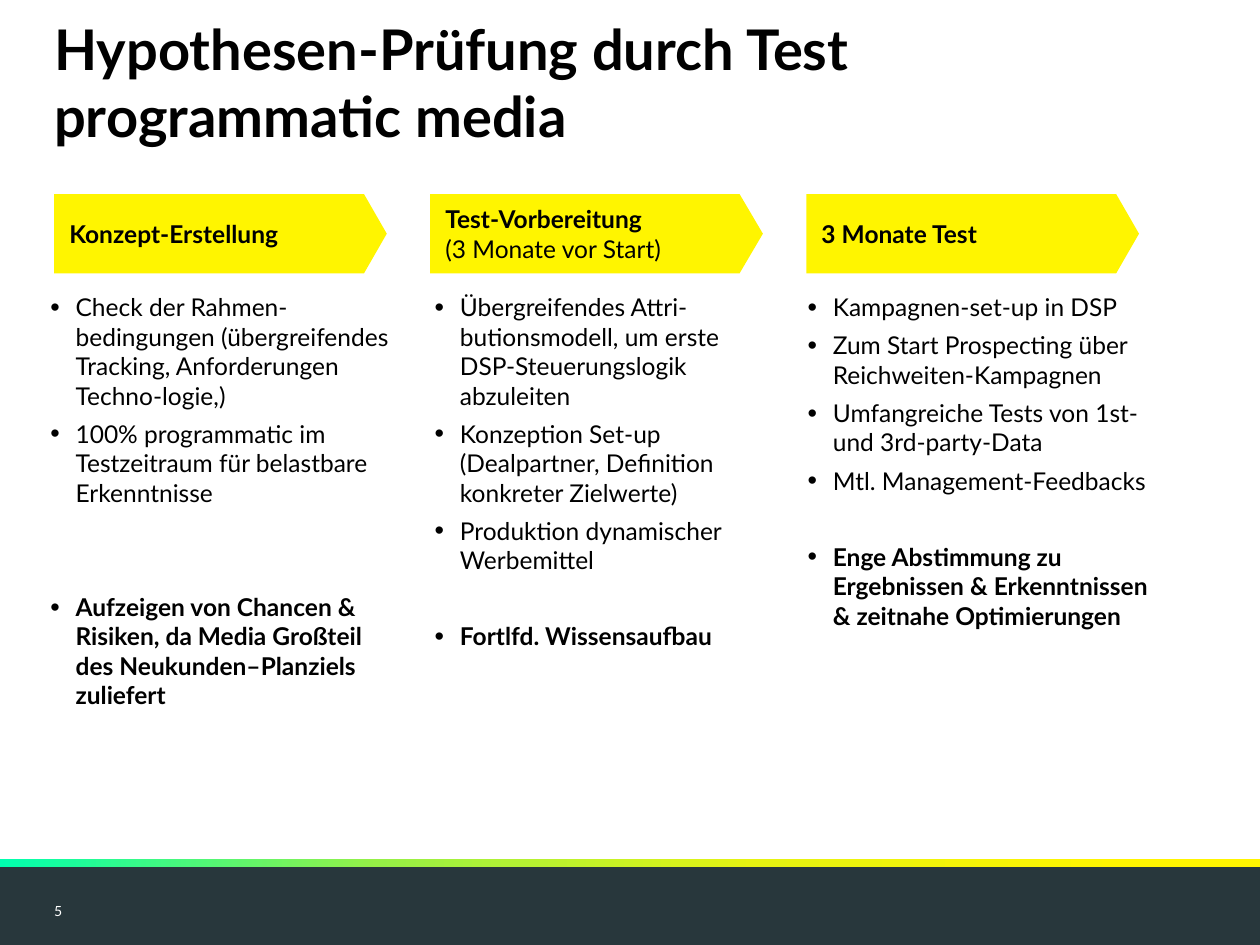
from copy import deepcopy
from dataclasses import dataclass

from lxml import etree
from pptx import Presentation
from pptx.dml.color import RGBColor
from pptx.enum.shapes import MSO_SHAPE
from pptx.enum.text import MSO_ANCHOR, MSO_AUTO_SIZE, PP_ALIGN
from pptx.oxml.ns import qn
from pptx.util import Inches, Pt

RECT, ARROW = MSO_SHAPE.RECTANGLE, MSO_SHAPE.PENTAGON
TOP, MID, LOW = MSO_ANCHOR.TOP, MSO_ANCHOR.MIDDLE, MSO_ANCHOR.BOTTOM
LEFT = PP_ALIGN.LEFT
FIXED = MSO_AUTO_SIZE.NONE

WIDE, HIGH = 10, 7.5
EDGE, STEP = 0.43, 2.985
HEAD_TOP, LIST_TOP = 1.54, 2.32
GAP, LINE = 5, 16.8
COLORS = {"ink": "000000", "paper": "FFFFFF", "sun": "FFF500", "slate": "28373C"}
FADE = [(0, "00FFAF"), (0.3, "96F046"), (0.6, "E6F311"), (0.9, "FFF500")]


@dataclass
class Phase:
    head: str
    note: str
    tip: float
    left: float
    width: float
    items: list[str]
    goal: str
    skip: int
    slot: int


PHASES = [
    Phase("Konzept-Erstellung", "", 0.287, 0.4, 2.8, [
        "Check der Rahmen-bedingungen (übergreifendes Tracking, Anforderungen Techno-logie,)",
        "100% programmatic im Testzeitraum für belastbare Erkenntnisse",
    ], "Aufzeigen von Chancen & Risiken, da Media Großteil des Neukunden–Planziels zuliefert", 2, 1),
    Phase("Test-Vorbereitung", "(3 Monate vor Start)", 0.294, 3.45, 2.74, [
        "Übergreifendes Attri-butionsmodell, um erste DSP-Steuerungslogik abzuleiten",
        "Konzeption Set-up (Dealpartner, Definition konkreter Zielwerte)",
        "Produktion dynamischer Werbemittel",
    ], "Fortlfd. Wissensaufbau", 1, 2),
    Phase("3 Monate Test", "", 0.288, 6.41, 2.77, [
        "Kampagnen-set-up in DSP",
        "Zum Start Prospecting über Reichweiten-Kampagnen",
        "Umfangreiche Tests von 1st- und 3rd-party-Data",
        "Mtl. Management-Feedbacks",
    ], "Enge Abstimmung zu Ergebnissen & Erkenntnissen & zeitnahe Optimierungen", 1, 4),
]


def tint(name: str) -> RGBColor:
    return RGBColor.from_string(COLORS[name])


def place(shape, left: float, top: float, width: float, height: float) -> None:
    spots = {"left": left, "top": top, "width": width, "height": height}
    for key, value in spots.items():
        setattr(shape, key, Inches(value))


def frame(shape, anchor, inset: float = 0):
    text = shape.text_frame
    sides = {f"margin_{side}": Inches(inset) for side in ("left", "right", "top", "bottom")}
    form = {"word_wrap": True, "auto_size": FIXED, "vertical_anchor": anchor, **sides}
    for key, value in form.items():
        setattr(text, key, value)
    return text


def write(para, words: str, size: int, bold: bool = False, ink: str = "ink", before: float = 0) -> None:
    run = para.add_run()
    run.text = words
    form = {"alignment": LEFT, "space_before": Pt(before), "space_after": Pt(0), "line_spacing": 1.0}
    for key, value in form.items():
        setattr(para, key, value)
    for key, value in {"name": "Lato", "size": Pt(size), "bold": bold}.items():
        setattr(run.font, key, value)
    run.font.color.rgb = tint(ink)


def bullet(para) -> None:
    props = para._p.get_or_add_pPr()
    props.set("marL", str(Inches(0.2)))
    props.set("indent", str(-Inches(0.2)))
    color = etree.SubElement(props, qn("a:buClr"))
    etree.SubElement(color, qn("a:srgbClr"), val=COLORS["ink"])
    etree.SubElement(props, qn("a:buSzPct"), val="110000")
    etree.SubElement(props, qn("a:buFont"), typeface="Arial")
    etree.SubElement(props, qn("a:buChar"), char="•")


def block(slide, kind, box: tuple, fill: str):
    shape = slide.shapes.add_shape(kind, *map(Inches, box))
    shape.shadow.inherit = False
    shape.fill.solid()
    shape.fill.fore_color.rgb = tint(fill)
    shape.line.fill.background()
    return shape


def fade(shape) -> None:
    shape.fill.gradient()
    shape.fill.gradient_angle = 0
    stops = shape.element.find(".//" + qn("a:gsLst"))
    for stop in list(stops):
        stops.append(deepcopy(stop))
    for stop, (spot, code) in zip(shape.fill.gradient_stops, FADE):
        stop.position = spot
        stop.color.rgb = RGBColor.from_string(code)


def lines(text):
    yield text.paragraphs[0]
    while True:
        yield text.add_paragraph()


def draw_head(slide, col: int, phase: Phase) -> None:
    shape = block(slide, ARROW, (EDGE + col * STEP, HEAD_TOP, 2.64, 0.63), "sun")
    shape.adjustments[0] = phase.tip
    rows = lines(frame(shape, MID, 0.12))
    write(next(rows), phase.head, 14, True)
    if phase.note:
        write(next(rows), phase.note, 14)


def draw_list(slide, phase: Phase) -> None:
    shape = slide.placeholders[phase.slot]
    place(shape, phase.left, LIST_TOP, phase.width, 3.58)
    rows = lines(frame(shape, TOP))
    for spot, item in enumerate(phase.items):
        para = next(rows)
        bullet(para)
        write(para, item, 14, before=GAP if spot else 0)
    para = next(rows)
    bullet(para)
    write(para, phase.goal, 14, True, before=GAP + phase.skip * (LINE + GAP))


def main() -> None:
    deck = Presentation()
    deck.slide_width, deck.slide_height = Inches(WIDE), Inches(HIGH)
    slide = deck.slides.add_slide(deck.slide_layouts[4])
    spare = slide.placeholders[3].element
    spare.getparent().remove(spare)

    block(slide, RECT, (0, 6.86, WIDE, 0.64), "slate")
    fade(block(slide, RECT, (0, 6.82, WIDE, 0.06), "sun"))

    title = slide.shapes.title
    place(title, EDGE, 0.59, 9.13, 0.59)
    write(frame(title, LOW).paragraphs[0], "Hypothesen-Prüfung durch Test programmatic media", 32, True)

    for col, phase in enumerate(PHASES):
        draw_head(slide, col, phase)
        draw_list(slide, phase)

    page = slide.shapes.add_textbox(*map(Inches, (EDGE, 7.17, 1.18, 0.12)))
    write(frame(page, MID).paragraphs[0], "5", 8, ink="paper")
    deck.save("out.pptx")


if __name__ == "__main__":
    main()
